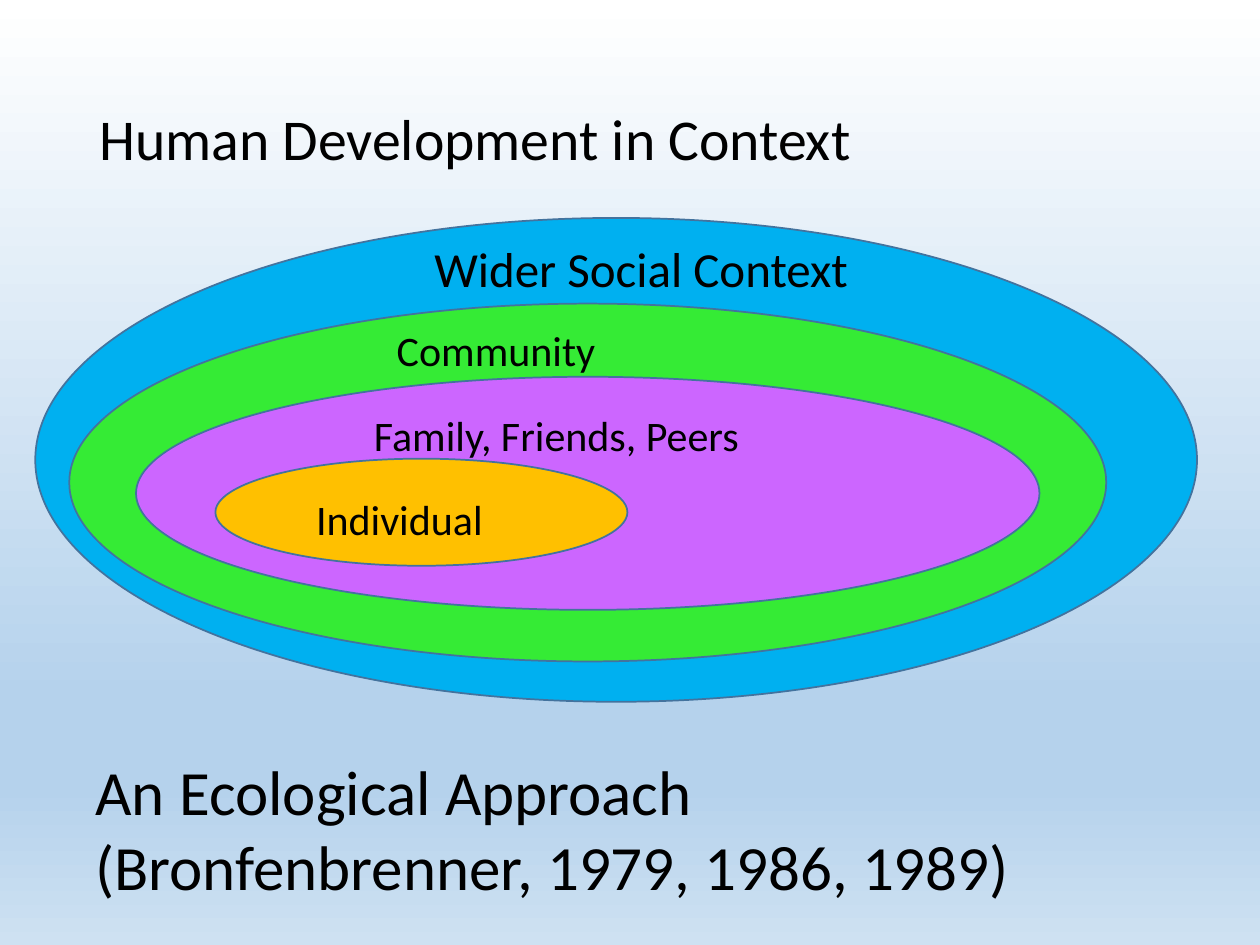
from lxml import etree
from pptx import Presentation
from pptx.dml.color import RGBColor
from pptx.enum import shapes, text
from pptx.oxml import ns
from pptx.util import Inches, Pt

COLORS = {
    "text": "000000",
    "outline": "43739E",
    "wider": "00B0F0",
    "community": "35EB35",
    "family": "CC66FF",
    "individual": "FFC000",
}
BACKGROUND_STOPS = [(0, "FFFFFF"), (74, "B5D2EC"), (83, "B5D2EC"), (100, "CEE1F2")]

RINGS = [
    ("wider", (0, 0, 9.22, 3.84), "Wider Social Context", (3.07, 0.11, 4.57, 0.57), 28),
    ("community", (0.27, 0.68, 8.23, 2.84), "Community", (2.77, 0.8, 3.23, 0.5), 24),
    ("family", (0.8, 1.26, 7.17, 1.85), "Family, Friends, Peers", (2.59, 1.47, 5.04, 0.5), 24),
    ("individual", (1.43, 1.91, 3.27, 0.85), "Individual", (2.13, 2.14, 2.05, 0.5), 24),
]


def rgb(name):
    return RGBColor.from_string(COLORS[name])


def place(box, left=0, top=0):
    x, y, w, h = box
    return Inches(left + x), Inches(top + y), Inches(w), Inches(h)


def paint_background(s):
    fill = s.background.fill
    fill.gradient()
    fill.gradient_angle = 270
    stops = s.element.find(".//" + ns.qn("a:gsLst"))
    for stop in list(stops):
        stops.remove(stop)
    for percent, color in BACKGROUND_STOPS:
        stop = etree.SubElement(stops, ns.qn("a:gs"), pos=str(percent * 1000))
        etree.SubElement(stop, ns.qn("a:srgbClr"), val=color)


def add_text(s, position, content, size, anchor=text.MSO_ANCHOR.TOP, spacing=None):
    tf = s.shapes.add_textbox(*position).text_frame
    tf.word_wrap = True
    tf.vertical_anchor = anchor
    tf.text = content
    for p in tf.paragraphs:
        p.line_spacing = spacing
        for r in p.runs:
            r.font.name = "Calibri"
            r.font.size = Pt(size)
            r.font.color.rgb = rgb("text")


def add_title(s, box):
    add_text(s, place(box), "Human Development in Context", 33, text.MSO_ANCHOR.MIDDLE, 0.9)


def add_rings(s, left, top):
    for color, oval, label, label_box, size in RINGS:
        sp = s.shapes.add_shape(shapes.MSO_SHAPE.OVAL, *place(oval, left, top))
        sp.shadow.inherit = False
        sp.fill.solid()
        sp.fill.fore_color.rgb = rgb(color)
        sp.line.color.rgb = rgb("outline")
        sp.line.width = Pt(1)
        add_text(s, place(label_box, left, top), label, size)


def add_source(s, box):
    add_text(s, place(box), "An Ecological Approach\n(Bronfenbrenner, 1979, 1986, 1989)", 36)


def main():
    prs = Presentation()
    prs.slide_width = Inches(10)
    prs.slide_height = Inches(7.5)
    s = prs.slides.add_slide(prs.slide_layouts[6])
    paint_background(s)
    add_title(s, (0.69, 0.4, 8.62, 1.45))
    add_rings(s, 0.28, 1.73)
    add_source(s, (0.66, 5.92, 8.43, 1.31))
    prs.save("out.pptx")


if __name__ == "__main__":
    main()
